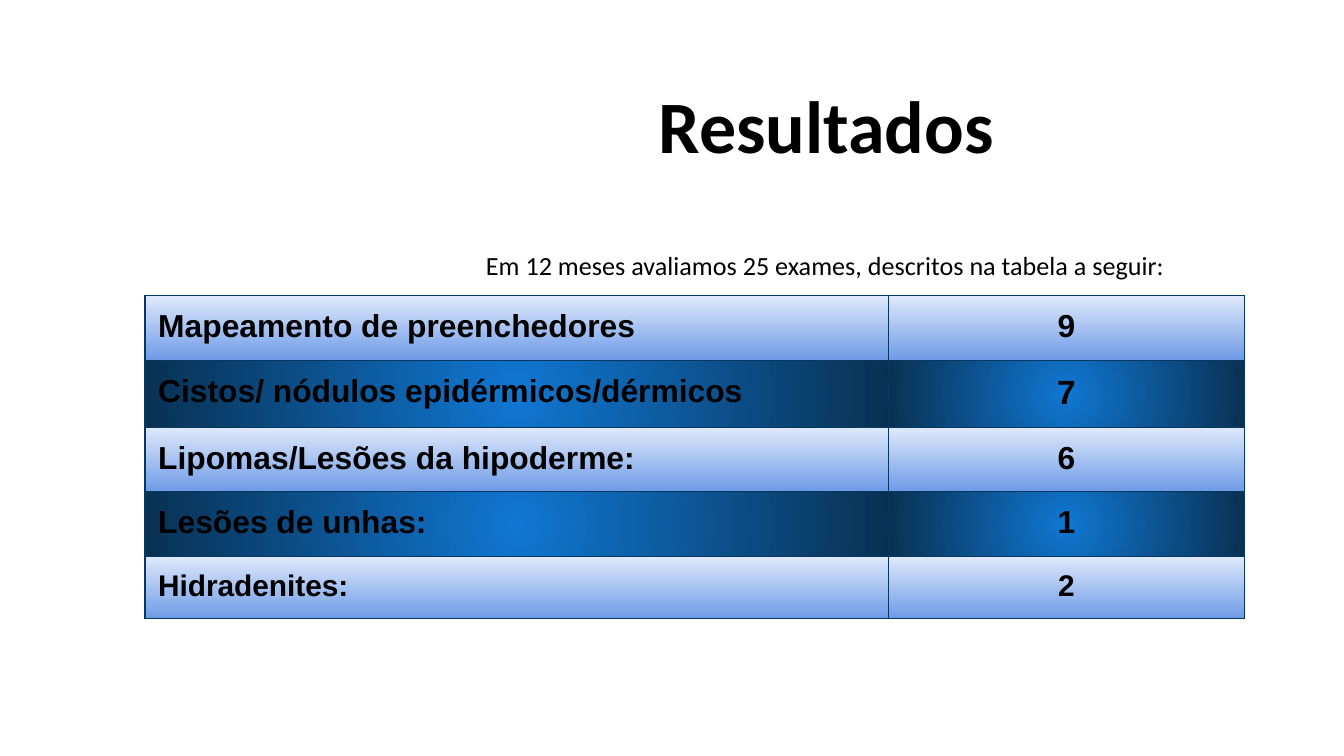
from lxml import etree
from pptx import Presentation
from pptx.dml.color import RGBColor
from pptx.enum.text import MSO_ANCHOR, MSO_AUTO_SIZE, PP_ALIGN
from pptx.oxml import parse_xml
from pptx.oxml.ns import nsdecls, qn
from pptx.util import Cm, Pt

TITLE_ONLY = 5
LEFT, CENTER = PP_ALIGN.LEFT, PP_ALIGN.CENTER
TOP, MIDDLE = MSO_ANCHOR.TOP, MSO_ANCHOR.MIDDLE
NO_AUTOFIT = MSO_AUTO_SIZE.NONE

BLACK, BORDER = "000000", "073763"
LIGHT_BAND = ("DFE9FB", "6E9BE7", '<a:lin ang="5400000" scaled="0"/>')
DARK_BAND = (
    "1077D2", "093153",
    '<a:path path="circle"><a:fillToRect l="50000" t="50000" r="50000" b="50000"/></a:path>',
)
COLUMN_WIDTHS = (Cm(14.05), Cm(6.73))
ROW_HEIGHT = Cm(1.07)
CELL_MARGIN = Cm(0.25)

# Label, count, label size, count size
EXAMS = (
    ("Mapeamento de preenchedores", "9", 17, 17),
    ("Cistos/ nódulos epidérmicos/dérmicos", "7", 17, 18),
    ("Lipomas/Lesões da hipoderme:", "6", 17, 17),
    ("Lesões de unhas:", "1", 17, 17),
    ("Hidradenites:", "2", 16, 16),
)


def color(hex_value):
    return RGBColor.from_string(hex_value)


def set_attributes(target, values):
    for name, value in values.items():
        setattr(target, name, value)


def write(frame, text, align, font_name, size, bold=False):
    paragraph = frame.paragraphs[0]
    paragraph.alignment = align
    run = paragraph.add_run()
    run.text = text
    set_attributes(run.font, {"name": font_name, "size": Pt(size), "bold": bold})
    run.font.color.rgb = color(BLACK)
    return paragraph


def add_title(slide):
    title = slide.shapes.title
    set_attributes(title, {"left": Cm(6.05), "top": Cm(1.55),
                           "width": Cm(19.13), "height": Cm(1.6)})
    set_attributes(title.text_frame, {"vertical_anchor": MIDDLE, "word_wrap": True,
                                      "auto_size": NO_AUTOFIT})
    write(title.text_frame, "Resultados", CENTER, "Calibri", 39.6, True)


def add_introduction(slide):
    introduction = slide.shapes.add_textbox(Cm(3.99), Cm(4.29), Cm(23.22), Cm(9.5))
    frame = introduction.text_frame
    set_attributes(frame, {"vertical_anchor": TOP, "word_wrap": True})
    paragraph = write(frame, "Em 12 meses avaliamos 25 exames, descritos na tabela a seguir:",
                      CENTER, "Calibri", 14)
    paragraph.line_spacing = 1.5
    set_attributes(paragraph._p.get_or_add_pPr(), {"marL": Cm(0.97), "indent": 0})


def decorate_cell(cell, band):
    """Give a cell its four borders and a two-stop gradient fill."""
    properties = cell._tc.get_or_add_tcPr()
    for side in ("lnL", "lnR", "lnT", "lnB"):
        line = etree.SubElement(properties, qn(f"a:{side}"), w=str(Pt(0.75)))
        solid = etree.SubElement(line, qn("a:solidFill"))
        etree.SubElement(solid, qn("a:srgbClr"), val=BORDER)
    start, end, direction = band
    properties.append(parse_xml(
        f'<a:gradFill {nsdecls("a")} rotWithShape="1"><a:gsLst>'
        f'<a:gs pos="0"><a:srgbClr val="{start}"/></a:gs>'
        f'<a:gs pos="100000"><a:srgbClr val="{end}"/></a:gs>'
        f'</a:gsLst>{direction}</a:gradFill>'
    ))


def fill_cell(cell, text, align, size, band):
    margins = ("margin_left", "margin_right", "margin_top", "margin_bottom")
    set_attributes(cell, dict.fromkeys(margins, CELL_MARGIN))
    cell.vertical_anchor = TOP
    write(cell.text_frame, text, align, "Arial", size, True)
    decorate_cell(cell, band)


def add_exam_table(slide):
    table = slide.shapes.add_table(
        len(EXAMS), len(COLUMN_WIDTHS), Cm(2.74), Cm(5.59),
        sum(COLUMN_WIDTHS), ROW_HEIGHT * len(EXAMS),
    ).table
    set_attributes(table, {"first_row": False, "horz_banding": False})
    for column, width in zip(table.columns, COLUMN_WIDTHS):
        column.width = width
    for index, (label, count, label_size, count_size) in enumerate(EXAMS):
        table.rows[index].height = ROW_HEIGHT
        band = DARK_BAND if index % 2 else LIGHT_BAND
        fill_cell(table.cell(index, 0), label, LEFT, label_size, band)
        fill_cell(table.cell(index, 1), count, CENTER, count_size, band)


def main():
    presentation = Presentation()
    set_attributes(presentation, {"slide_width": Cm(25.4), "slide_height": Cm(14.29)})
    slide = presentation.slides.add_slide(presentation.slide_layouts[TITLE_ONLY])
    add_title(slide)
    add_introduction(slide)
    add_exam_table(slide)
    presentation.save("out.pptx")


if __name__ == "__main__":
    main()
